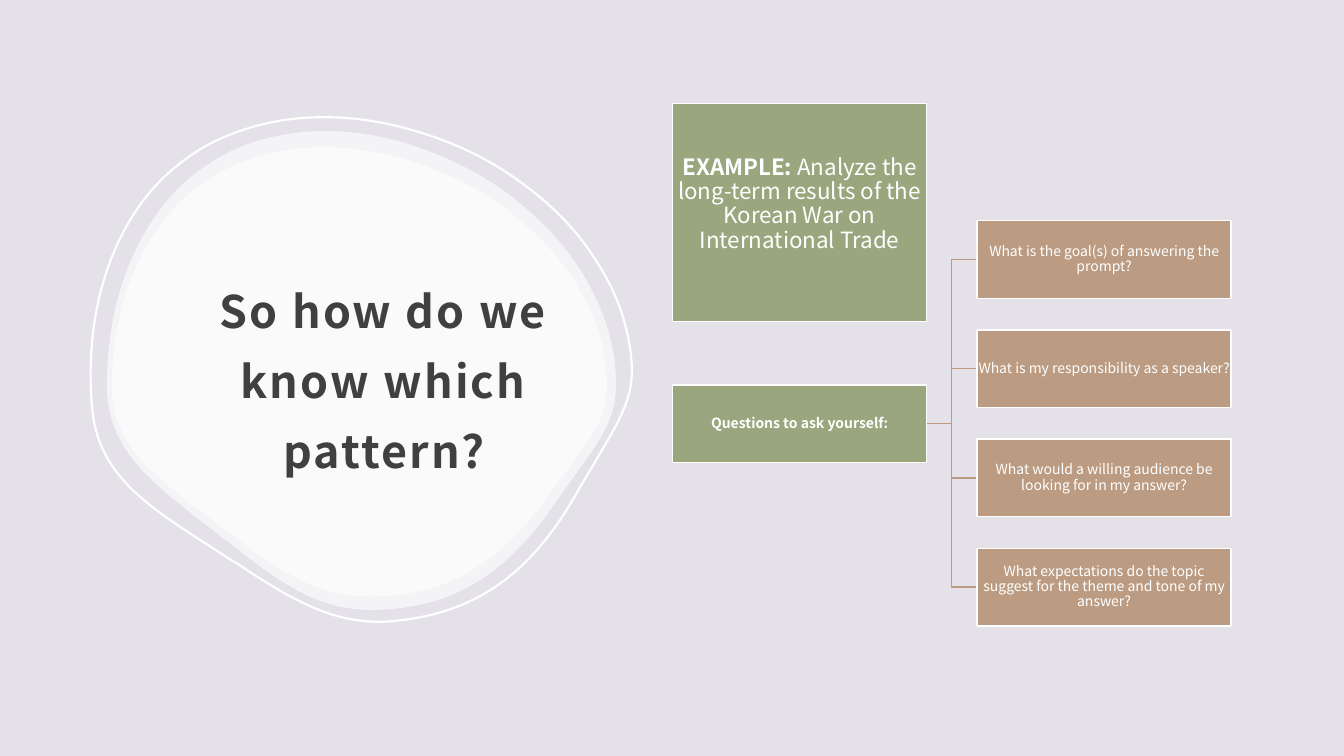
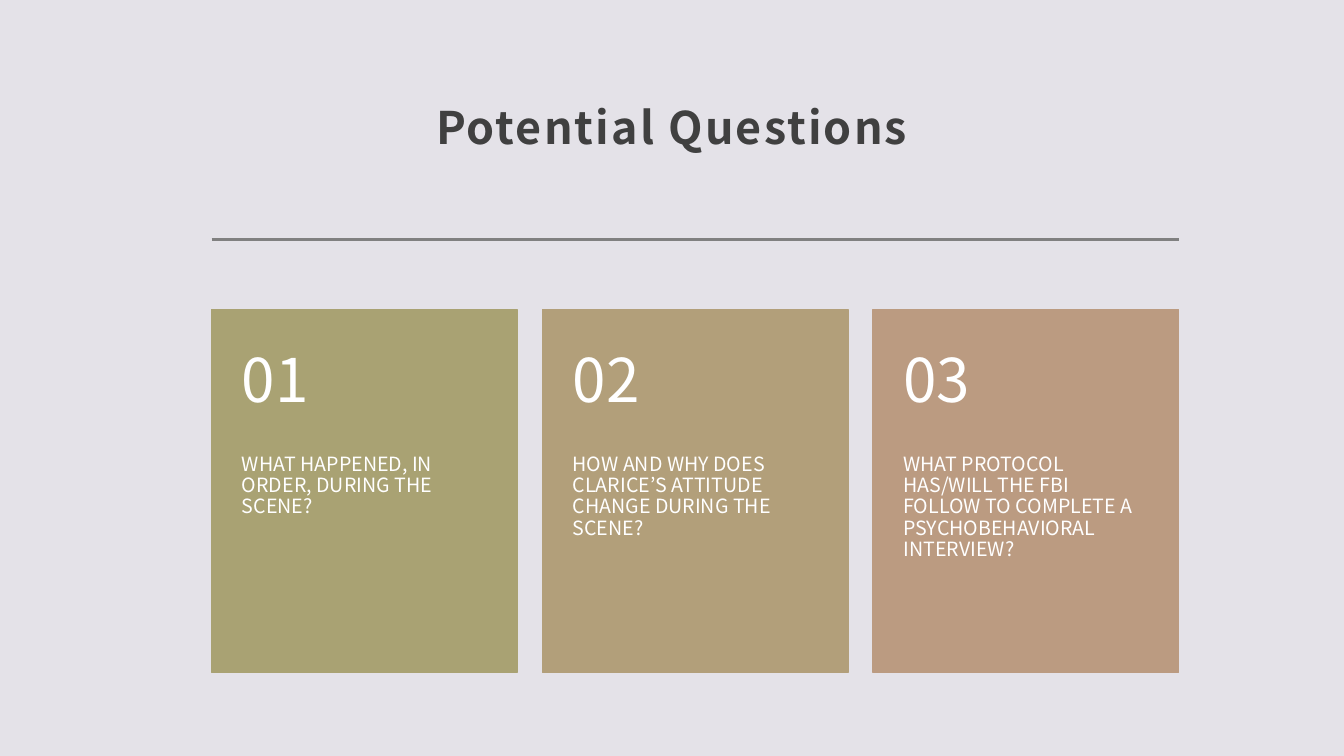
from lxml import etree
from pptx import Presentation
from pptx.dml.color import RGBColor
from pptx.enum.shapes import MSO_CONNECTOR, MSO_SHAPE
from pptx.enum.text import MSO_ANCHOR, PP_ALIGN
from pptx.oxml.ns import qn
from pptx.util import Inches, Pt

FONT = "Noto Sans CJK JP"
COLORS = {
    "background": "E4E2E8",
    "white": "FFFFFF",
    "title": "404040",
    "rule": "808080",
    "sage": "9AA67D",
    "olive": "A9A273",
    "sand": "B29F7A",
    "clay": "BB9B81",
}
TITLE = dict(size=32, color="title", bold=True, tracking=150, line_spacing=1.3,
             margins=(0.12, 0.12, 0.12, 0.1))


def rgb(name):
    return RGBColor.from_string(COLORS[name])


def write(shape, text, lead="", size=10, color="white", bold=False, tracking=0,
          align=PP_ALIGN.CENTER, anchor=MSO_ANCHOR.MIDDLE, line_spacing=0.9,
          margins=(0.01, 0.01, 0.01, 0.01)):
    frame = shape.text_frame
    frame.word_wrap = True
    frame.vertical_anchor = anchor
    (frame.margin_left, frame.margin_top,
     frame.margin_right, frame.margin_bottom) = map(Inches, margins)
    paragraph = frame.paragraphs[0]
    paragraph.alignment = align
    paragraph.line_spacing = line_spacing
    for words, heavy in ((lead, True), (text, bold)):
        if words:
            run = paragraph.add_run()
            run.text = words
            run.font.name = FONT
            run.font.size = Pt(size)
            run.font.bold = heavy
            run.font.color.rgb = rgb(color)
            if tracking:
                run._r.get_or_add_rPr().set("spc", str(tracking))


prs = Presentation()
prs.slide_width = Inches(13.33)
prs.slide_height = Inches(7.5)
prs.slide_master.background.fill.solid()
prs.slide_master.background.fill.fore_color.rgb = rgb("background")
blank = prs.slide_layouts[6]

pattern_slide = prs.slides.add_slide(blank)

pebble_left, pebble_top = 1.06, 1.3
pebble_start = (3.22, 1.3)
pebble_curves = [
    ((2.89, 1.3), (2.58, 1.37), (2.31, 1.49)),
    ((2.06, 1.61), (1.83, 1.78), (1.65, 2)),
    ((1.27, 2.46), (1.06, 3.1), (1.06, 3.82)),
    ((1.06, 4.1), (1.14, 4.33), (1.32, 4.56)),
    ((1.51, 4.8), (1.8, 5.02), (2.1, 5.25)),
    ((2.15, 5.29), (2.21, 5.34), (2.27, 5.38)),
    ((2.78, 5.79), (3.16, 6.05), (3.67, 6.05)),
    ((4.45, 6.05), (5.01, 5.73), (5.52, 4.97)),
    ((5.59, 4.87), (5.66, 4.78), (5.72, 4.69)),
    ((5.98, 4.33), (6.11, 4.14), (6.11, 3.82)),
    ((6.11, 3.5), (6.03, 3.18), (5.87, 2.88)),
    ((5.72, 2.58), (5.5, 2.31), (5.22, 2.07)),
    ((4.95, 1.83), (4.62, 1.64), (4.28, 1.51)),
    ((3.93, 1.37), (3.57, 1.3), (3.22, 1.3)),
]

for left, top, width, height, rotation, filled in [
    (1.06, 1.3, 5.05, 4.75, 0, True),
    (1.11, 1.46, 4.91, 4.46, 0, True),
    (0.89, 1.13, 5.37, 5.05, 355, False),
]:
    builder = pattern_slide.shapes.build_freeform(*map(Inches, pebble_start))
    builder.add_line_segments(
        [(Inches(x), Inches(y)) for *handles, (x, y) in pebble_curves], close=True)
    pebble = builder.convert_to_shape()
    segments = list(pebble._element.iter(qn("a:lnTo")))
    for segment, curve in zip(segments, pebble_curves):
        bezier = etree.Element(qn("a:cubicBezTo"))
        for x, y in curve:
            etree.SubElement(bezier, qn("a:pt"), x=str(Inches(x) - Inches(pebble_left)),
                             y=str(Inches(y) - Inches(pebble_top)))
        segment.getparent().replace(segment, bezier)
    pebble.left, pebble.top = Inches(left), Inches(top)
    pebble.width, pebble.height = Inches(width), Inches(height)
    pebble.rotation = rotation
    pebble.shadow.inherit = False
    if filled:
        pebble.fill.solid()
        pebble.fill.fore_color.rgb = rgb("white")
        tint = pebble._element.spPr.find(qn("a:solidFill"))[0]
        etree.SubElement(tint, qn("a:alpha")).set("val", "60000")
        pebble.line.fill.background()
    else:
        pebble.fill.background()
        pebble.line.color.rgb = rgb("white")
        pebble.line.width = Pt(1.5)

heading = pattern_slide.shapes.add_textbox(Inches(2), Inches(2.08), Inches(3.62), Inches(3.21))
write(heading, "So how do we know which pattern?", **TITLE)

prompt_left, question_left, node_width, node_height = 6.67, 9.69, 2.52, 0.77
questions = [
    "What is the goal(s) of answering the prompt?",
    "What is my responsibility as a speaker?",
    "What would a willing audience be looking for in my answer?",
    "What expectations do the topic suggest for the theme and tone of my answer?",
]
first_top, last_top = 2.19, 5.44
question_step = (last_top - first_top) / (len(questions) - 1)
question_tops = [first_top + question_step * row for row in range(len(questions))]

for top in question_tops:
    branch = pattern_slide.shapes.add_connector(
        MSO_CONNECTOR.ELBOW, Inches(prompt_left + node_width), Inches(4.2),
        Inches(question_left), Inches(top + node_height / 2))
    branch.line.color.rgb = rgb("clay")
    branch.line.width = Pt(1)
    etree.SubElement(branch._element.spPr, qn("a:effectLst"))

nodes = [
    (prompt_left, 1.03, 2.16, "sage",
     "Analyze the long-term results of the Korean War on International Trade",
     dict(lead="EXAMPLE: ", size=16, margins=(0.01, 0.01, 0.01, 0.17))),
    (prompt_left, 3.82, node_height, "sage", "Questions to ask yourself:", dict(bold=True)),
]
nodes += [(question_left, top, node_height, "clay", question, {})
          for top, question in zip(question_tops, questions)]
for left, top, height, color, words, style in nodes:
    node = pattern_slide.shapes.add_shape(
        MSO_SHAPE.RECTANGLE, Inches(left), Inches(top), Inches(node_width), Inches(height))
    node.shadow.inherit = False
    node.fill.solid()
    node.fill.fore_color.rgb = rgb(color)
    node.line.color.rgb = rgb("white")
    node.line.width = Pt(1)
    write(node, words, **style)

questions_slide = prs.slides.add_slide(blank)

rule = questions_slide.shapes.add_connector(
    MSO_CONNECTOR.STRAIGHT, Inches(2.1), Inches(2.38), Inches(11.69), Inches(2.38))
rule.line.color.rgb = rgb("rule")
rule.line.width = Pt(2)
etree.SubElement(rule._element.spPr, qn("a:effectLst"))

heading = questions_slide.shapes.add_textbox(Inches(1.33), Inches(0.6), Inches(10.67), Inches(1.14))
write(heading, "Potential Questions", **TITLE)

cards = [
    ("olive", "WHAT HAPPENED, IN ORDER, DURING THE SCENE?"),
    ("sand", "HOW AND WHY DOES CLARICE’S ATTITUDE CHANGE DURING THE SCENE?"),
    ("clay", "WHAT PROTOCOL HAS/WILL THE FBI FOLLOW TO COMPLETE A PSYCHOBEHAVIORAL INTERVIEW?"),
]
card_top, card_width = Inches(3.07), Inches(3.03)
for index, (color, question) in enumerate(cards):
    left = Inches(2.1 + 3.28 * index)
    card = questions_slide.shapes.add_shape(
        MSO_SHAPE.RECTANGLE, left, card_top, card_width, Inches(3.6))
    card.shadow.inherit = False
    card.fill.solid()
    card.fill.fore_color.rgb = rgb(color)
    card.line.color.rgb = rgb(color)
    card.line.width = Pt(1)
    body = questions_slide.shapes.add_textbox(left, Inches(4.51), card_width, Inches(2.16))
    write(body, question, size=14, align=PP_ALIGN.LEFT, anchor=MSO_ANCHOR.TOP,
          margins=(0.3, 0, 0.3, 0.36))
    number = questions_slide.shapes.add_textbox(left, Inches(3.08), card_width, Inches(1.44))
    write(number, f"{index + 1:02}", size=43, align=PP_ALIGN.LEFT,
          margins=(0.3, 0.18, 0.3, 0.18))

prs.save("out.pptx")
